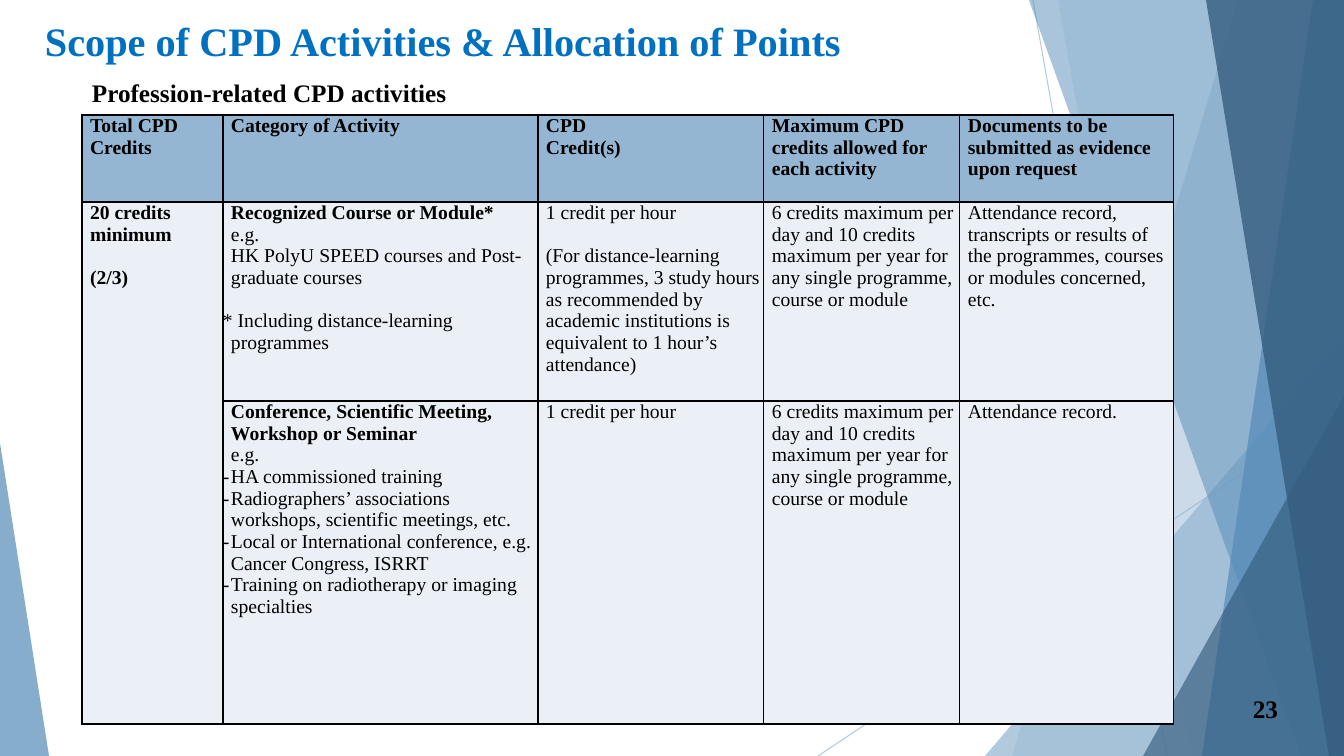
from lxml.etree import SubElement
from pptx import Presentation
from pptx.dml.color import RGBColor
from pptx.enum.shapes import MSO_CONNECTOR as Conn, MSO_SHAPE as Shape
from pptx.enum.text import MSO_ANCHOR as Anchor, PP_ALIGN as Align
from pptx.oxml.ns import qn
from pptx.util import Emu, Pt

WIDE, HIGH = 1344, 756
SCALE = 12192000 / WIDE
FONT = "Times New Roman"
INDENT = 8
LINE = 15.5
COLORS = {
    "title": "0070C0", "ink": "000000", "light": "94B6D2",
    "mid": "558BB8", "dark": "355D7E", "pale": "EAF0F6",
}

# Polygon corners, fill and opacity
BANDS = [
    ([(1238, 0), (1344, 0), (1344, 756), (1012, 756)], "light", 36),
    ([(1058, 0), (1344, 0), (1344, 756), (1192, 756)], "light", 20),
]
SHARDS = [
    ([(1029, 0), (1344, 0), (1344, 756), (1301, 756)], "mid", 50),
    ([(1313, 0), (1344, 0), (1344, 756), (1202, 756)], "mid", 70),
    ([(1206, 0), (1344, 0), (1344, 756), (1329, 756)], "dark", 80),
]

COLS = [141, 315, 226, 196, 214]
ROWS = [87, 199, 323]
LIMIT = ("6 credits maximum per day and 10 credits maximum per year "
         "for any single programme, course or module")
# A cell is a list of (text, marks): b bold, g gap above, h hanging, d dash
CELLS = [
    [
        [("Total CPD", "b"), ("Credits", "b")],
        [("Category of Activity", "b")],
        [("CPD", "b"), ("Credit(s)", "b")],
        [("Maximum CPD credits allowed for each activity", "b")],
        [("Documents to be submitted as evidence upon request", "b")],
    ],
    [
        [("20 credits minimum", "b"), ("(2/3)", "bg")],
        [("Recognized Course or Module*", "b"),
         ("e.g.", ""),
         ("HK PolyU SPEED courses and Post-graduate courses", ""),
         ("* Including distance-learning programmes", "gh")],
        [("1 credit per hour", ""),
         ("(For distance-learning programmes, 3 study hours as recommended "
          "by academic institutions is equivalent to 1 hour’s attendance)",
          "g")],
        [(LIMIT, "")],
        [("Attendance record, transcripts or results of the programmes, "
          "courses or modules concerned, etc.", "")],
    ],
    [
        [],
        [("Conference, Scientific Meeting, Workshop or Seminar", "b"),
         ("e.g.", ""),
         ("HA commissioned training", "hd"),
         ("Radiographers’ associations\nworkshops, scientific meetings, etc.",
          "hd"),
         ("Local or International conference, e.g. Cancer Congress, ISRRT",
          "hd"),
         ("Training on radiotherapy or imaging specialties", "hd")],
        [("1 credit per hour", "")],
        [(LIMIT, "")],
        [("Attendance record.", "")],
    ],
]


def px(n):
    return Emu(round(n * SCALE))


def tint(color, name, alpha=100):
    """Set a colour and its opacity in percent."""
    color.rgb = RGBColor.from_string(COLORS[name])
    if alpha < 100:
        node = color._xFill.find(qn("a:srgbClr"))
        SubElement(node, qn("a:alpha"), val=str(alpha * 1000))


class Deck:
    def __init__(self):
        self.prs = Presentation()
        self.prs.slide_width, self.prs.slide_height = px(WIDE), px(HIGH)
        self.slide = self.prs.slides.add_slide(self.prs.slide_layouts[6])
        self.shapes = self.slide.shapes

    def line(self, x1, y1, x2, y2):
        line = self.shapes.add_connector(
            Conn.STRAIGHT, px(x1), px(y1), px(x2), px(y2))
        line.line.width = Pt(0.75)
        line.line.fill.solid()
        tint(line.line.fill.fore_color, "light", 70)
        SubElement(line._element.spPr, qn("a:effectLst"))

    def paint(self, shape, color, alpha):
        shape.shadow.inherit = False
        shape.line.fill.background()
        shape.fill.solid()
        tint(shape.fill.fore_color, color, alpha)

    def poly(self, points, color, alpha):
        form = self.shapes.build_freeform(*points[0], scale=SCALE)
        form.add_line_segments(points[1:], close=True)
        self.paint(form.convert_to_shape(), color, alpha)

    def wedge(self, x, y, w, h, tip, color, alpha):
        """Triangle whose apex sits at the share tip of its width."""
        shape = self.shapes.add_shape(
            Shape.ISOSCELES_TRIANGLE, px(x), px(y), px(w), px(h))
        shape.adjustments[0] = tip
        self.paint(shape, color, alpha)

    def style(self, para, size, color="ink", bold=True):
        font = para.font
        font.name, font.size, font.bold = FONT, Pt(size), bold
        tint(font.color, color)

    def text(self, x, y, w, h, words, size, color="ink", align=Align.LEFT,
             anchor=Anchor.TOP):
        frame = self.shapes.add_textbox(px(x), px(y), px(w), px(h)).text_frame
        frame.word_wrap = True
        frame.vertical_anchor = anchor
        para = frame.paragraphs[0]
        para.text, para.alignment = words, align
        self.style(para, size, color)

    def para(self, para, words, marks):
        para.text = words
        if "g" in marks:
            para.space_before = Pt(LINE)
        props = para._p.get_or_add_pPr()
        props.set("marL", str(px(INDENT)))
        props.set("indent", str(-px(INDENT) if "h" in marks else 0))
        if "d" in marks:
            SubElement(props, qn("a:buFont"), typeface=FONT)
            SubElement(props, qn("a:buChar"), char="-")
        else:
            SubElement(props, qn("a:buNone"))
        self.style(para, 14, bold="b" in marks)

    def border(self, cell):
        props = cell._tc.get_or_add_tcPr()
        for at, side in enumerate(("lnL", "lnR", "lnT", "lnB")):
            edge = SubElement(props, qn("a:" + side), w=str(Pt(1)))
            fill = SubElement(edge, qn("a:solidFill"))
            SubElement(fill, qn("a:srgbClr"), val=COLORS["ink"])
            props.insert(at, edge)

    def cell(self, cell, paras, color):
        cell.margin_left = cell.margin_right = 0
        cell.margin_top = cell.margin_bottom = 0
        cell.fill.solid()
        tint(cell.fill.fore_color, color)
        self.border(cell)
        frame = cell.text_frame
        for i, (words, marks) in enumerate(paras):
            para = frame.add_paragraph() if i else frame.paragraphs[0]
            self.para(para, words, marks)

    def table(self, x, y, cols, rows, cells):
        table = self.shapes.add_table(
            len(rows), len(cols), px(x), px(y),
            px(sum(cols)), px(sum(rows))).table
        for col, w in zip(table.columns, cols):
            col.width = px(w)
        for r, h in enumerate(rows):
            table.rows[r].height = px(h)
            for c, paras in enumerate(cells[r]):
                self.cell(table.cell(r, c), paras, "pale" if r else "light")
        table.cell(1, 0).merge(table.cell(2, 0))


def main():
    deck = Deck()
    deck.line(1033, 0, 1167, 756)
    deck.line(1344, 406, 818, 756)
    for band in BANDS:
        deck.poly(*band)
    deck.wedge(985, 336, 359, 420, 1, "light", 72)
    for shard in SHARDS:
        deck.poly(*shard)
    deck.wedge(1143, 396, 201, 360, 1, "dark", 66)
    deck.wedge(0, 443, 49, 313, 0, "mid", 70)
    deck.text(35, 11, 1288, 56, "Scope of CPD Activities & Allocation of Points",
              28.8, "title")
    deck.text(1213, 688, 75, 40, "23", 18, align=Align.RIGHT,
              anchor=Anchor.MIDDLE)
    deck.table(82, 115, COLS, ROWS, CELLS)
    deck.text(82, 72, 495, 40, "Profession-related CPD activities", 18)
    deck.prs.save("out.pptx")


if __name__ == "__main__":
    main()
